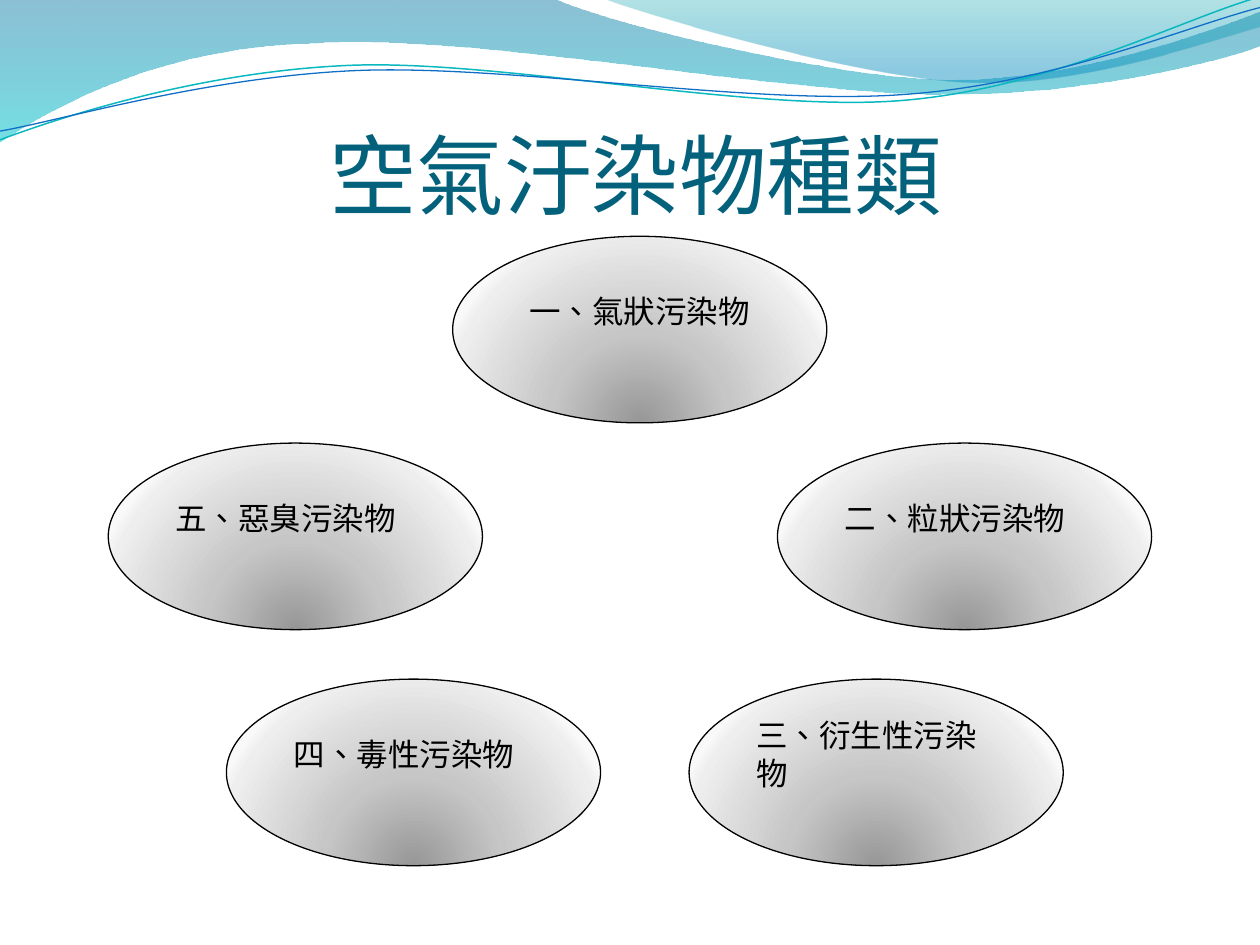
from dataclasses import dataclass

from lxml.etree import SubElement
from pptx import Presentation
from pptx.dml.color import RGBColor
from pptx.enum.lang import MSO_LANGUAGE_ID
from pptx.enum.shapes import MSO_SHAPE
from pptx.enum.text import MSO_ANCHOR, MSO_AUTO_SIZE, PP_ALIGN
from pptx.oxml.ns import qn
from pptx.shapes.autoshape import Shape
from pptx.slide import Slide
from pptx.util import Pt

OVAL_WIDTH, OVAL_HEIGHT = 213.8, 106.6


@dataclass
class Stop:
    position: int
    color: str
    opacity: int = 100


@dataclass
class Wave:
    start: tuple
    segments: list
    stops: list


@dataclass
class Strand:
    start: tuple
    segments: list
    color: str
    width: float


@dataclass
class Pollutant:
    label: str
    left: float
    top: float
    align: PP_ALIGN = PP_ALIGN.LEFT


WAVES = [
    Wave((0, 0), [
        (316.8, -0.7),
        (342.7, 12.2, 478.1, 45.4, 545.8, 45.4),
        (614.2, 45.4, 689.8, 18.7, 720, 6.5),
        (720.7, 25.9),
        (707.8, 31.7, 626.4, 54.7, 537.1, 54),
        (447.8, 54, 275, 20.2, 185, 24.5),
        (92.9, 25.9, 33.1, 59.8, -0.7, 81.4),
        (0, 0),
    ], [Stop(0, "0074A1", 45), Stop(100, "00C6CF", 55)]),
    Wave((344.9, -0.7), [
        (366.5, 7.9, 491, 44.6, 553.7, 46.8),
        (616.3, 49.7, 691.9, 23, 720, 15.1),
        (720, 0),
        (344.9, -0.7),
    ], [Stop(0, "00A1A9", 30), Stop(80, "008BBF", 45)]),
]
STRANDS = [
    Strand((0, 79.9), [
        (34.6, 67, 113.8, 41, 199.4, 37.4),
        (284.4, 33.8, 427, 64.1, 513.4, 57.6),
        (599.8, 51.1, 675.4, 10.8, 718.6, -1.4),
    ], "0AB8BF", 0.85),
    Strand((0, 74.9), [
        (33.8, 69.1, 118.1, 43.9, 203.8, 40.3),
        (290.2, 36.7, 429.8, 60.5, 516.2, 54),
        (601.9, 48.2, 677.5, 15.1, 720, 4.3),
    ], "0F6FC6", 0.75),
]
OVAL_STOPS = [Stop(0, "979797"), Stop(43, "C6C6C6"), Stop(93, "EEEEEE"), Stop(100, "F9F9F9")]
POLLUTANTS = [
    Pollutant("一、氣狀污染物", 258.7, 135, PP_ALIGN.CENTER),
    Pollutant("四、毒性污染物", 129.4, 388.1),
    Pollutant("二、粒狀污染物", 444.3, 253.2),
    Pollutant("五、惡臭污染物", 61.9, 253.2),
    Pollutant("三、衍生性污染物", 393.8, 388.1),
]


def rgb(color: str) -> RGBColor:
    return RGBColor.from_string(color)


def fill_gradient(shape: Shape, stops: list, radial: bool = False) -> None:
    shape.fill.gradient()
    gradient = shape.element.spPr.find(qn("a:gradFill"))
    for child in list(gradient):
        gradient.remove(child)
    stop_list = SubElement(gradient, qn("a:gsLst"))
    for stop in stops:
        node = SubElement(stop_list, qn("a:gs"), pos=str(stop.position * 1000))
        color = SubElement(node, qn("a:srgbClr"), val=stop.color)
        if stop.opacity < 100:
            SubElement(color, qn("a:alpha"), val=str(stop.opacity * 1000))
    if radial:
        circle = SubElement(gradient, qn("a:path"), path="circle")
        SubElement(circle, qn("a:fillToRect"), l="50000", t="130000", r="50000", b="-30000")
    else:
        SubElement(gradient, qn("a:lin"), ang="5400000", scaled="0")


def bend_segments(shape: Shape, segments: list) -> None:
    """Join the straight steps of each six-number segment into one cubic curve."""
    steps = iter(list(shape.element.spPr.iter(qn("a:lnTo"))))
    for segment in segments:
        first = next(steps)
        if len(segment) == 6:
            first.tag = qn("a:cubicBezTo")
            for step in (next(steps), next(steps)):
                first.append(step[0])
                step.getparent().remove(step)


def add_outline(slide: Slide, start: tuple, segments: list, close: bool) -> Shape:
    points = [(Pt(segment[i]), Pt(segment[i + 1]))
              for segment in segments for i in range(0, len(segment), 2)]
    builder = slide.shapes.build_freeform(Pt(start[0]), Pt(start[1]))
    builder.add_line_segments(points, close=close)
    shape = builder.convert_to_shape()
    bend_segments(shape, segments)
    shape.shadow.inherit = False
    return shape


def add_wave(slide: Slide, wave: Wave) -> None:
    shape = add_outline(slide, wave.start, wave.segments, True)
    fill_gradient(shape, wave.stops)
    shape.line.fill.background()


def add_strand(slide: Slide, strand: Strand) -> None:
    shape = add_outline(slide, strand.start, strand.segments, False)
    shape.fill.background()
    shape.line.color.rgb = rgb(strand.color)
    shape.line.width = Pt(strand.width)


def write_text(shape: Shape, text: str, font: str, size: float, color: str, align: PP_ALIGN) -> None:
    shape.text_frame.text = text
    para = shape.text_frame.paragraphs[0]
    para.alignment = align
    span = para.runs[0]
    span.font.name = font
    span.font.size = Pt(size)
    span.font.color.rgb = rgb(color)
    span.font.language_id = MSO_LANGUAGE_ID.TRADITIONAL_CHINESE


def place_title(slide: Slide, text: str) -> None:
    title = slide.shapes.title
    title.left, title.top, title.width, title.height = Pt(39.4), Pt(39.2), Pt(648), Pt(90)
    frame = title.text_frame
    frame.auto_size = MSO_AUTO_SIZE.NONE
    frame.vertical_anchor = MSO_ANCHOR.BOTTOM
    frame.margin_left = frame.margin_right = frame.margin_bottom = 0
    frame.margin_top = Pt(3.6)
    write_text(title, text, "Calibri", 50, "04617B", PP_ALIGN.CENTER)
    title.element.getparent().append(title.element)


def add_pollutant(slide: Slide, pollutant: Pollutant) -> None:
    oval = slide.shapes.add_shape(MSO_SHAPE.OVAL, Pt(pollutant.left), Pt(pollutant.top),
                                  Pt(OVAL_WIDTH), Pt(OVAL_HEIGHT))
    fill_gradient(oval, OVAL_STOPS, radial=True)
    oval.line.color.rgb = rgb("000000")
    oval.line.width = Pt(0.75)
    oval.shadow.inherit = False
    oval.text_frame.word_wrap = True
    oval.text_frame.vertical_anchor = MSO_ANCHOR.MIDDLE
    oval.text_frame.margin_bottom = Pt(24.7)
    write_text(oval, pollutant.label, "Cambria", 18, "000000", pollutant.align)


def main() -> None:
    deck = Presentation()
    deck.slide_width, deck.slide_height = Pt(720), Pt(540)
    slide = deck.slides.add_slide(deck.slide_layouts[5])
    for wave in WAVES:
        add_wave(slide, wave)
    for strand in STRANDS:
        add_strand(slide, strand)
    place_title(slide, "空氣汙染物種類")
    for pollutant in POLLUTANTS:
        add_pollutant(slide, pollutant)
    deck.save("out.pptx")


if __name__ == "__main__":
    main()
